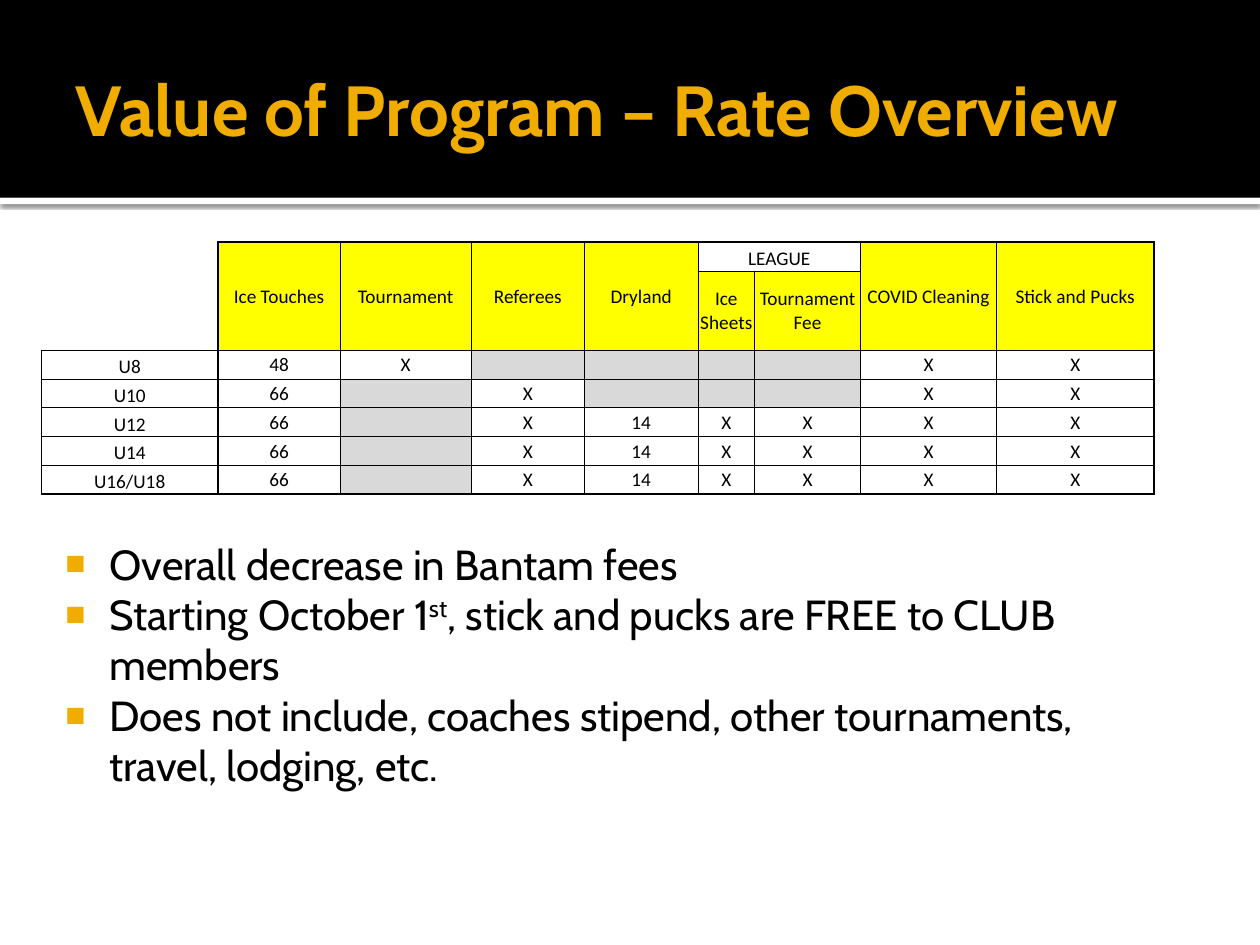
import dataclasses

import pptx
import pptx.dml.color
import pptx.enum.shapes
import pptx.enum.text
import pptx.oxml
import pptx.oxml.ns
import pptx.util
from pptx.util import Inches

ANCHOR = pptx.enum.text.MSO_ANCHOR
ALIGN = pptx.enum.text.PP_ALIGN
NO_TABLE_STYLE = "{2D5ABB26-0587-4C30-8999-92F81FD0307C}"
MARGINS = ("margin_left", "margin_top", "margin_right", "margin_bottom")


@dataclasses.dataclass(frozen=True)
class Theme:
    black: str = "000000"
    white: str = "FFFFFF"
    gold: str = "F0AD00"
    yellow: str = "FFFF00"
    gray: str = "D9D9D9"
    text_font: str = "Cabin"
    table_font: str = "Calibri"
    title_size: float = 40.5
    body_size: float = 24
    table_size: float = 11
    thin: float = 0.5
    thick: float = 1


THEME = Theme()
COLUMNS = [1.4, 0.97, 1.04, 0.9, 0.9, 0.45, 0.84, 1.08, 1.25]
HEADER_ROWS = [0.23, 0.63]
HEADINGS = [
    ["", "Ice Touches", "Tournament", "Referees", "Dryland", "LEAGUE", "", "COVID Cleaning", "Stick and Pucks"],
    ["", "", "", "", "", "Ice Sheets", "Tournament Fee", "", ""],
]
RATES = [
    ["U8", "48", "X", "", "", "", "", "X", "X"],
    ["U10", "66", "", "X", "", "", "", "X", "X"],
] + [[group, "66", "", "X", "14", "X", "X", "X", "X"] for group in ("U12", "U14", "U16/U18")]
BULLETS = [
    [("Overall decrease in Bantam fees", False)],
    [("Starting October 1", False), ("st", True), (", stick and pucks are FREE to CLUB members", False)],
    [("Does not include, coaches stipend, other tournaments, travel, lodging, etc.", False)],
]


def rgb(color):
    return pptx.dml.color.RGBColor.from_string(color)


def apply(target, formats):
    for name, value in formats.items():
        setattr(target, name, value)


def style_font(font, name, size, color, bold=False):
    apply(font, {"name": name, "size": pptx.util.Pt(size), "bold": bold})
    font.color.rgb = rgb(color)


def xml(markup):
    return pptx.oxml.parse_xml(f"<a:root {pptx.oxml.ns.nsdecls('a')}>{markup}</a:root>")[0]


def place(shape, box):
    apply(shape, dict(zip(("left", "top", "width", "height"), box)))


def set_frame(frame, anchor, insets):
    apply(frame, dict(zip(MARGINS, map(Inches, insets))))
    apply(frame, {"vertical_anchor": anchor, "word_wrap": True,
                  "auto_size": pptx.enum.text.MSO_AUTO_SIZE.NONE})


def add_band(page, box, color, order):
    band = page.shapes.add_shape(pptx.enum.shapes.MSO_SHAPE.RECTANGLE, *box)
    band.fill.solid()
    band.fill.fore_color.rgb = rgb(color)
    band.line.fill.background()
    band.shadow.inherit = False
    page.shapes._spTree.insert(2 + order, band._element)
    return band


def add_header(page, box):
    left, top, width, height = box
    stripe = add_band(page, (left, top + height, width, Inches(0.05)), THEME.white, 0)
    effects = stripe._element.spPr.find(pptx.oxml.ns.qn("a:effectLst"))
    effects.append(xml(
        '<a:outerShdw blurRad="31750" dist="10160" dir="5400000" rotWithShape="0">'
        f'<a:srgbClr val="{THEME.black}"><a:alpha val="60000"/></a:srgbClr></a:outerShdw>'))
    add_band(page, box, THEME.black, 1)


def add_title(page, box):
    title = page.shapes.title
    place(title, box)
    set_frame(title.text_frame, ANCHOR.MIDDLE, (0.1, 0.05, 0.05, 0.05))
    para = title.text_frame.paragraphs[0]
    para.alignment = ALIGN.LEFT
    span = para.add_run()
    span.text = "Value of Program – Rate Overview"
    style_font(span.font, THEME.text_font, THEME.title_size, THEME.gold, True)


def draw_borders(cell, row, column):
    corner = row < len(HEADINGS) and column == 0
    edges = {
        "L": (column, (0, 1, len(COLUMNS)), not corner),
        "R": (column + cell.span_width, (0, 1, len(COLUMNS)), True),
        "T": (row, (0, 2, 7), not corner),
        "B": (row + cell.span_height, (0, 2, 7), not corner or row == 1),
    }
    for side, (boundary, heavy, visible) in edges.items():
        if visible:
            width = pptx.util.Pt(THEME.thick if boundary in heavy else THEME.thin)
            cell._tc.get_or_add_tcPr().append(xml(
                f'<a:ln{side} w="{width}"><a:solidFill><a:srgbClr val="{THEME.black}"/>'
                f'</a:solidFill></a:ln{side}>'))


def fill_cell(cell, row, column, text):
    heading = row < len(HEADINGS)
    bottom = column == 0 or text == "LEAGUE"
    apply(cell, dict(zip(MARGINS, map(Inches, (0.01, 0.01, 0.01, 0)))))
    cell.vertical_anchor = ANCHOR.BOTTOM if bottom else ANCHOR.MIDDLE
    para = cell.text_frame.paragraphs[0]
    para.alignment = ALIGN.CENTER
    if text:
        span = para.add_run()
        span.text = text
        style_font(span.font, THEME.table_font, THEME.table_size, THEME.black)
    else:
        para._p.append(xml(f'<a:endParaRPr sz="{THEME.table_size * 100}"/>'))
    if cell.is_spanned:
        return
    draw_borders(cell, row, column)
    if bottom or (text and not heading):
        cell.fill.background()
    else:
        cell.fill.solid()
        cell.fill.fore_color.rgb = rgb(THEME.yellow if heading else THEME.gray)


def add_rate_table(page, box):
    rows = HEADINGS + RATES
    table = page.shapes.add_table(len(rows), len(COLUMNS), *box).table
    apply(table, {"first_row": False, "horz_banding": False})
    table._tbl.tblPr.find(pptx.oxml.ns.qn("a:tableStyleId")).text = NO_TABLE_STYLE
    for column, width in zip(table.columns, COLUMNS):
        column.width = Inches(width)
    header_heights = [Inches(height) for height in HEADER_ROWS]
    rate_height = (box[3] - sum(header_heights)) // len(RATES)
    for row, height in zip(table.rows, header_heights + [rate_height] * len(RATES)):
        row.height = height
    for column in (1, 2, 3, 4, 7, 8):
        table.cell(0, column).merge(table.cell(1, column))
    table.cell(0, 5).merge(table.cell(0, 6))
    for row, texts in enumerate(rows):
        for column, text in enumerate(texts):
            fill_cell(table.cell(row, column), row, column, text)


def add_bullets(page, box):
    body = page.placeholders[1]
    place(body, box)
    frame = body.text_frame
    set_frame(frame, ANCHOR.TOP, (0.06, 0.1, 0.1, 0.05))
    for index, spans in enumerate(BULLETS):
        para = frame.add_paragraph() if index else frame.paragraphs[0]
        apply(para, {"space_before": pptx.util.Pt(0), "alignment": ALIGN.LEFT})
        properties = para._p.get_or_add_pPr()
        properties.set("marL", str(Inches(0.48)))
        properties.set("indent", str(Inches(-0.35)))
        for markup in (f'<a:buClr><a:srgbClr val="{THEME.gold}"/></a:buClr>',
                       '<a:buSzPct val="80000"/>', '<a:buChar char="■"/>'):
            properties.append(xml(markup))
        for text, raised in spans:
            span = para.add_run()
            span.text = text
            style_font(span.font, THEME.text_font, THEME.body_size, THEME.black)
            if raised:
                span._r.get_or_add_rPr().set("baseline", "30000")


def main():
    deck = pptx.Presentation()
    apply(deck, {"slide_width": Inches(10), "slide_height": Inches(7.5)})
    page = deck.slides.add_slide(deck.slide_layouts[1])
    add_header(page, (0, 0, deck.slide_width, Inches(1.57)))
    add_title(page, (Inches(0.5), Inches(0.17), Inches(9), Inches(1.37)))
    add_rate_table(page, (Inches(0.33), Inches(1.92), Inches(8.83), Inches(2)))
    add_bullets(page, (Inches(0.33), Inches(4.17), Inches(8.83), Inches(2.58)))
    deck.save("out.pptx")


if __name__ == "__main__":
    main()
